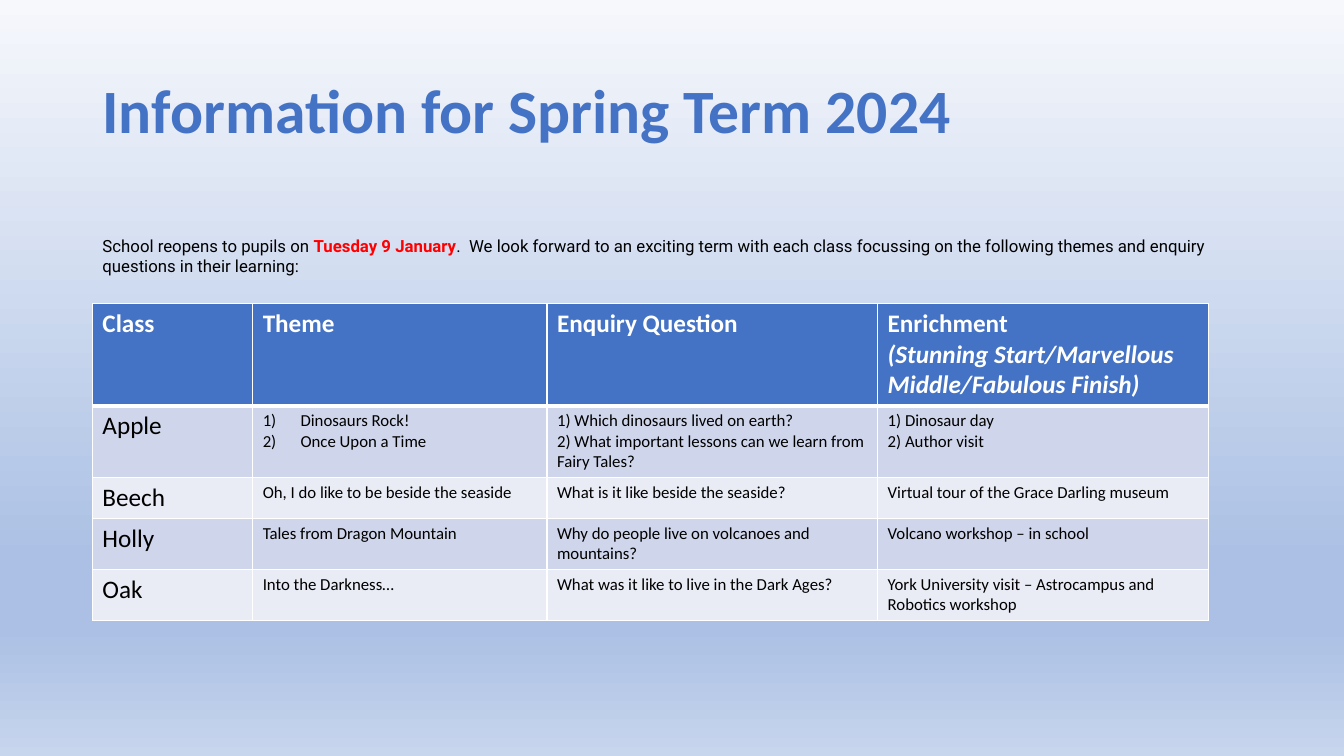
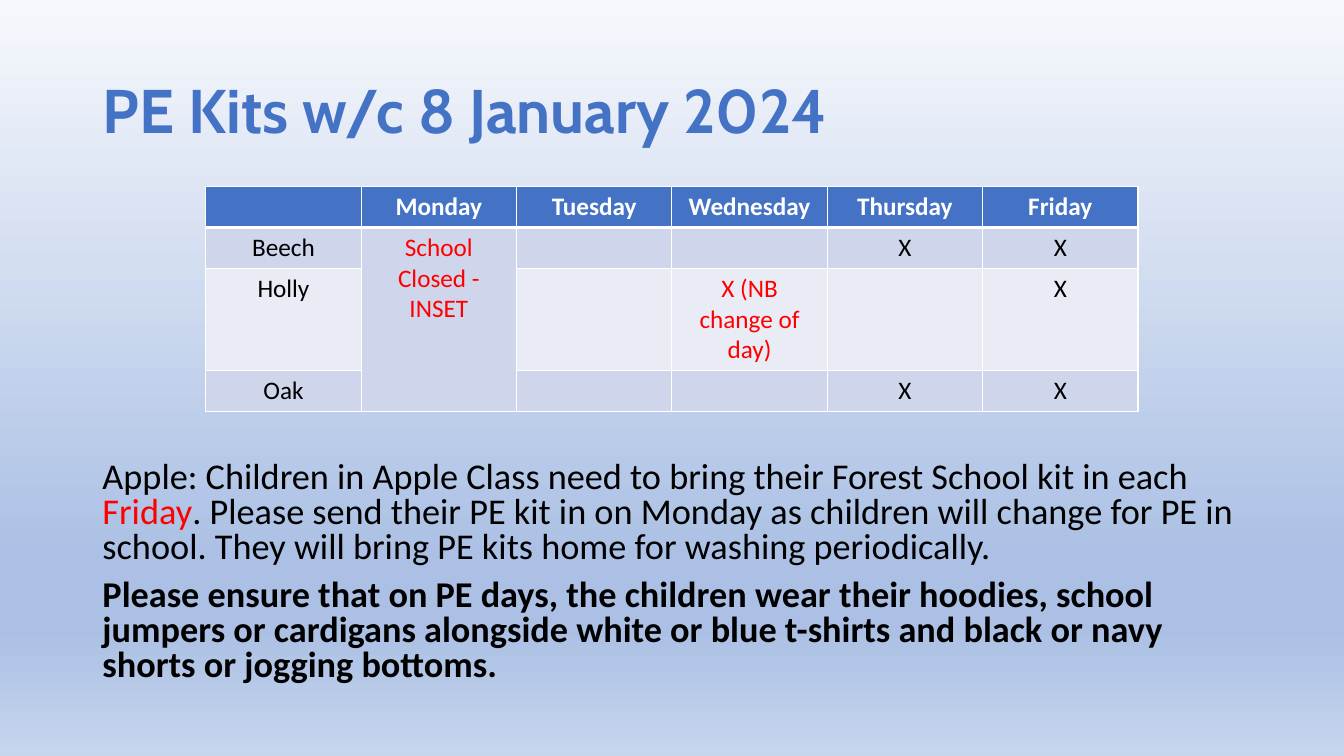
from dataclasses import dataclass, replace

from lxml import etree
from pptx import Presentation
from pptx.dml.color import RGBColor
from pptx.enum import text as txt
from pptx.oxml.ns import qn
from pptx.util import Pt

BLUE, WHITE, BLACK, RED = "4472C4", "FFFFFF", "000000", "FF0000"
BANDS = ("CFD5EA", "E9EBF5")
BACKDROP = ((0, "F6F8FC"), (74, "ABC0E4"), (83, "ABC0E4"), (100, "C7D5ED"))
LEFT, WIDTH = 66, 828
ROW_HEIGHT = 29.2
LIST_INDENT = 27


@dataclass(frozen=True)
class Style:
    size: float
    color: str = BLACK
    bold: bool = False
    italic: bool = False
    font: str = "Calibri"


TITLE = Style(44, BLUE, bold=True)
HEADER = Style(18, WHITE, bold=True)
LABEL = Style(18)
DETAIL = Style(12)
INTRO = Style(12, font="Roboto")
NOTICE = Style(25.9)

THEME_COLUMNS = (114.5, 210.2, 236.2, 236.2)
THEME_HEADER = (
    "Class", "Theme", "Enquiry Question",
    ["Enrichment",
     [("(Stunning Start/Marvellous Middle/Fabulous Finish)", replace(HEADER, italic=True))]],
)
THEMES = (
    ("Apple",
     ["Dinosaurs Rock!", "Once Upon a Time"],
     ["1) Which dinosaurs lived on earth?",
      "2) What important lessons can we learn from Fairy Tales?"],
     ["1) Dinosaur day", "2) Author visit"]),
    ("Beech", "Oh, I do like to be beside the seaside",
     "What is it like beside the seaside?", "Virtual tour of the Grace Darling museum"),
    ("Holly", "Tales from Dragon Mountain",
     "Why do people live on volcanoes and mountains?", "Volcano workshop – in school"),
    ("Oak", "Into the Darkness…",
     "What was it like to live in the Dark Ages?",
     "York University visit – Astrocampus and Robotics workshop"),
)

CLOSED = [[("School Closed - INSET", replace(LABEL, color=RED))]]
NEW_DAY = [[("X (NB change of day)", replace(LABEL, color=RED))]]
PE_COLUMNS = (111,) * 6
PE_HEADER = ("", "Monday", "Tuesday", "Wednesday", "Thursday", "Friday")
PE_DAYS = (
    ("Beech", CLOSED, "", "", "X", "X"),
    ("Holly", "", "", NEW_DAY, "", "X"),
    ("Oak", "", "", "", "X", "X"),
)


def rgb(color):
    return RGBColor.from_string(color)


def format_run(run, style):
    font = run.font
    font.size, font.name = Pt(style.size), style.font
    font.bold, font.italic = style.bold, style.italic
    font.color.rgb = rgb(style.color)


def write(frame, content, style, align=txt.PP_ALIGN.LEFT):
    """Fill a frame with a string, or with paragraphs: strings or lists of (text, style)."""
    paragraphs = [content] if isinstance(content, str) else content
    for index, parts in enumerate(paragraphs):
        paragraph = frame.add_paragraph() if index else frame.paragraphs[0]
        paragraph.alignment = align
        if isinstance(parts, str):
            paragraph.text = parts
            for run in paragraph.runs:
                format_run(run, style)
        else:
            for part, part_style in parts:
                run = paragraph.add_run()
                run.text = part
                format_run(run, part_style)


def set_marker(paragraph, tag, indent=0, **attributes):
    """Set the bullet element and the hanging indent of a paragraph."""
    properties = paragraph._p.get_or_add_pPr()
    properties.set("marL", str(Pt(indent)))
    properties.set("indent", str(-Pt(indent)))
    etree.SubElement(properties, qn(tag), attributes)


def place(shape, left, top, width, height):
    shape.left, shape.top = Pt(left), Pt(top)
    shape.width, shape.height = Pt(width), Pt(height)


def set_backdrop(master):
    fill = master.background.fill
    fill.gradient()
    fill.gradient_angle = 270
    stops = master.element.find(".//" + qn("p:bg")).find(".//" + qn("a:gsLst"))
    for stop in list(stops):
        stops.remove(stop)
    for percent, color in BACKDROP:
        stop = etree.SubElement(stops, qn("a:gs"), pos=str(percent * 1000))
        etree.SubElement(stop, qn("a:srgbClr"), val=color)


def add_titled_slide(prs, title, font):
    slide = prs.slides.add_slide(prs.slide_layouts[1])
    heading = slide.shapes.title
    place(heading, LEFT, 28.8, WIDTH, 104.4)
    frame = heading.text_frame
    frame.vertical_anchor = txt.MSO_ANCHOR.MIDDLE
    write(frame, title, replace(TITLE, font=font))
    frame.paragraphs[0].line_spacing = 0.9
    return slide


def fill_body(slide, top, height, paragraphs, style, line_spacing):
    body = slide.placeholders[1]
    place(body, LEFT, top, WIDTH, height)
    frame = body.text_frame
    frame.auto_size = txt.MSO_AUTO_SIZE.NONE
    write(frame, paragraphs, style)
    for index, paragraph in enumerate(frame.paragraphs):
        paragraph.line_spacing = line_spacing
        paragraph.space_before = Pt(10 if index else 0)
        set_marker(paragraph, "a:buNone")


def style_cell(cell, color, bottom):
    """Give a cell white borders, with the bottom width in points, and a fill."""
    properties = cell._tc.get_or_add_tcPr()
    for side, width in (("L", 1), ("R", 1), ("T", 1), ("B", bottom)):
        line = etree.SubElement(properties, qn("a:ln" + side), w=str(Pt(width)))
        solid = etree.SubElement(line, qn("a:solidFill"))
        etree.SubElement(solid, qn("a:srgbClr"), val=WHITE)
    cell.fill.solid()
    cell.fill.fore_color.rgb = rgb(color)


def add_class_table(slide, left, top, columns, header, rows, detail, align):
    frame = slide.shapes.add_table(
        len(rows) + 1, len(columns), Pt(left), Pt(top),
        Pt(sum(columns)), Pt(ROW_HEIGHT * (len(rows) + 1)))
    table = frame.table
    table.horz_banding = False
    for column, width in zip(table.columns, columns):
        column.width = Pt(width)
    for r, entries in enumerate((header, *rows)):
        table.rows[r].height = Pt(ROW_HEIGHT)
        for c, entry in enumerate(entries):
            cell = table.cell(r, c)
            if r == 0:
                style_cell(cell, BLUE, 3)
                style = HEADER
            else:
                style_cell(cell, BANDS[(r - 1) % 2], 1)
                style = detail if c else LABEL
            write(cell.text_frame, entry, style, align)
    return table


def add_term_slide(prs):
    slide = add_titled_slide(prs, "Information for Spring Term 2024", "Calibri")
    fill_body(slide, 165, 40, [[
        ("School reopens to pupils on ", INTRO),
        ("Tuesday 9 January", replace(INTRO, color=RED, bold=True)),
        (".  We look forward to an exciting term with each class focussing on the "
         "following themes and enquiry questions in their learning:", INTRO),
    ]], INTRO, 1.0)
    table = add_class_table(slide, LEFT, 216.7, THEME_COLUMNS, THEME_HEADER, THEMES,
                            DETAIL, txt.PP_ALIGN.LEFT)
    for theme in table.cell(1, 1).text_frame.paragraphs:
        set_marker(theme, "a:buAutoNum", LIST_INDENT, type="arabicParenR")


def add_pe_slide(prs):
    slide = add_titled_slide(prs, "PE Kits w/c 8 January 2024", "Cabin")
    fill_body(slide, 326, 160, [
        [("Apple: Children in Apple Class need to bring their Forest School kit in each ", NOTICE),
         ("Friday", replace(NOTICE, color=RED)),
         (". Please send their PE kit in on Monday as children will change for PE in school. "
          "They will bring PE kits home for washing periodically.", NOTICE)],
        "Please ensure that on PE days, the children wear their hoodies, school jumpers or "
        "cardigans alongside white or blue t-shirts and black or navy shorts or jogging bottoms.",
    ], replace(NOTICE, bold=True), 0.8)
    table = add_class_table(slide, 147, 133.2, PE_COLUMNS, PE_HEADER, PE_DAYS,
                            LABEL, txt.PP_ALIGN.CENTER)
    table.cell(1, 1).merge(table.cell(3, 1))


def main():
    prs = Presentation()
    prs.slide_width, prs.slide_height = Pt(960), Pt(540)
    set_backdrop(prs.slide_master)
    add_term_slide(prs)
    add_pe_slide(prs)
    prs.save("out.pptx")


if __name__ == "__main__":
    main()
